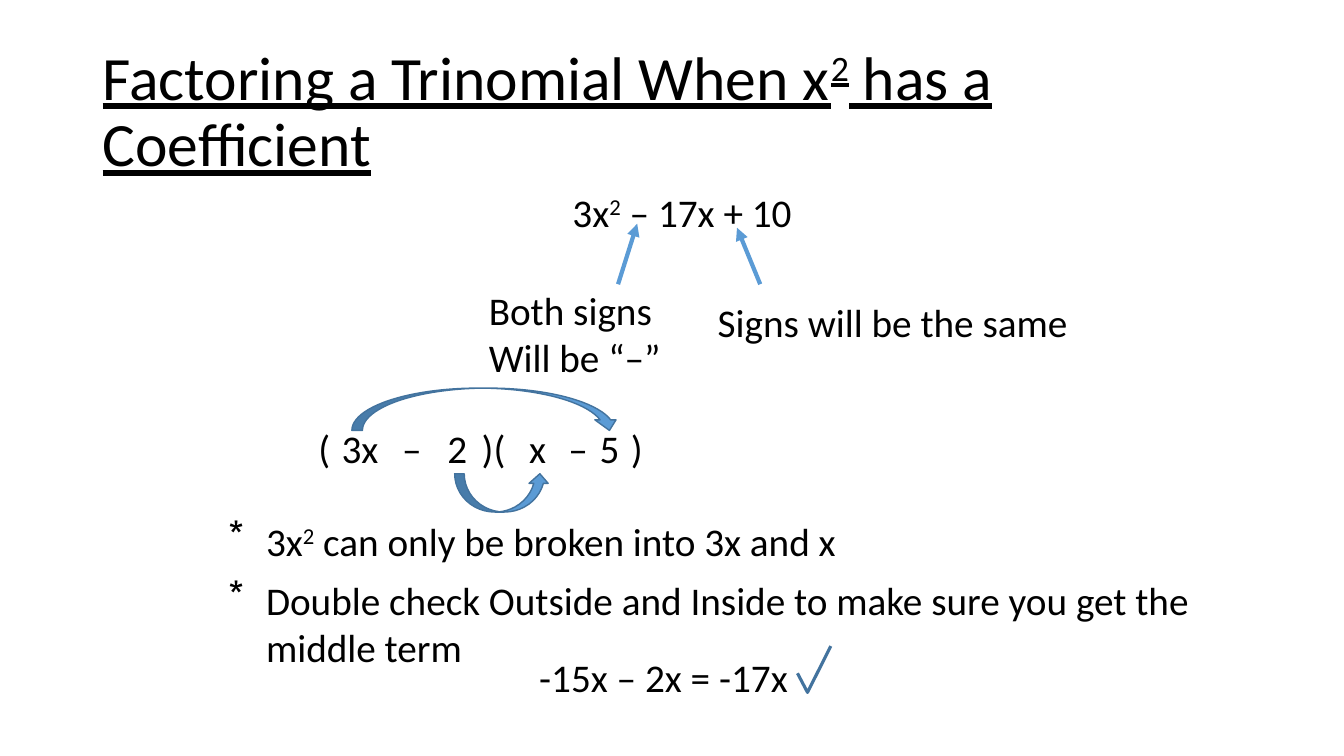
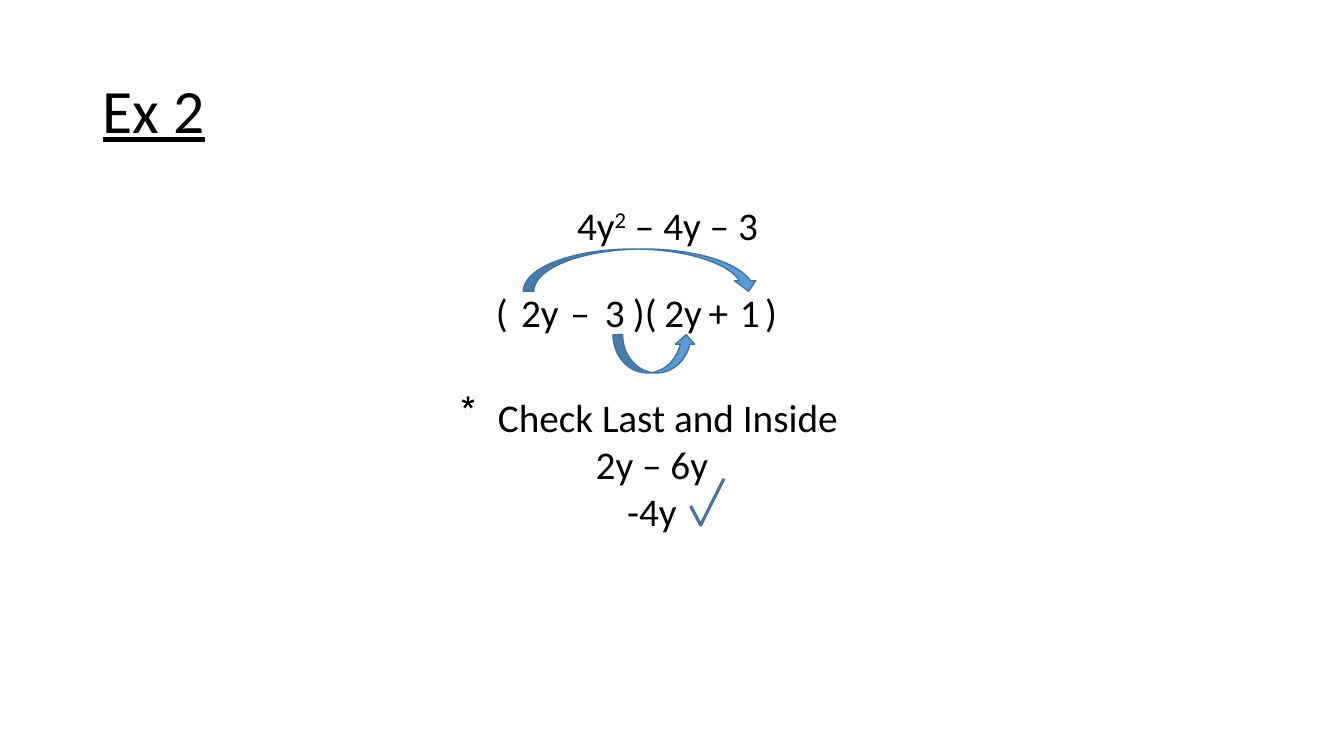
import pptx
import pptx.dml.color
import pptx.enum.shapes
import pptx.enum.text
import pptx.util
from lxml import etree
from pptx.oxml.ns import qn

Inches = pptx.util.Inches
Pt = pptx.util.Pt
Align = pptx.enum.text.PP_ALIGN
Preset = pptx.enum.shapes.MSO_SHAPE

BLACK = pptx.dml.color.RGBColor(0x00, 0x00, 0x00)
BLUE = pptx.dml.color.RGBColor(0x5B, 0x9B, 0xD5)
DARK_BLUE = pptx.dml.color.RGBColor(0x43, 0x73, 0x9E)
FONT = "Calibri"
HANGING = Inches(0.37)


def add_text(slide, lines, left, top, width, height, size=28, align=Align.LEFT):
    box = slide.shapes.add_textbox(Inches(left), Inches(top), Inches(width), Inches(height))
    frame = box.text_frame
    frame.word_wrap = True
    for index, line in enumerate(lines):
        paragraph = frame.paragraphs[0] if index == 0 else frame.add_paragraph()
        paragraph.alignment = align
        paragraph.font.name = FONT
        paragraph.font.size = Pt(size)
        paragraph.font.color.rgb = BLACK
        for position, part in enumerate(line.split("²")):
            if position:
                exponent = paragraph.add_run()
                exponent.text = "2"
                exponent.font._element.set("baseline", "30000")
            if part:
                paragraph.add_run().text = part
    return frame


def add_star(paragraph):
    paragraph.alignment = Align.LEFT
    properties = paragraph._p.get_or_add_pPr()
    properties.set("marL", str(HANGING))
    properties.set("indent", str(-HANGING))
    bullet = etree.Element(qn("a:buChar"), char="*")
    properties.insert(0, bullet)


presentation = pptx.Presentation()
presentation.slide_width = Inches(13.33)
presentation.slide_height = Inches(7.5)

examples = [
    {
        "title": "Factoring a Trinomial When x² has a Coefficient",
        "factors": ["(", "3x", "–", "2", ")(", "x", "–", "5", ")"],
        "stops": [3.16, 3.39, 3.99, 4.44, 4.78, 5.25, 5.64, 5.95, 6.26],
        "top": 4.16,
        "outside": (3.49, 3.85, 2.66),
        "inside": (4.51, 4.7, 0.94),
        "check": (7.91, 6.41),
    },
    {
        "title": "Ex 2",
        "factors": ["(", "2y", "–", "3", ")(", "2y", "+", "1", ")"],
        "stops": [4.92, 5.17, 5.66, 6, 6.28, 6.59, 7.03, 7.34, 7.59],
        "top": 2.81,
        "outside": (5.19, 2.47, 2.34),
        "inside": (6.08, 3.32, 0.82),
        "check": (6.85, 4.75),
    },
]

slides = []
for example in examples:
    slide = presentation.slides.add_slide(presentation.slide_layouts[6])
    slides.append(slide)

    title = add_text(slide, [example["title"]], 0.92, 0.4, 11.5, 1.45, size=44)
    title.vertical_anchor = pptx.enum.text.MSO_ANCHOR.MIDDLE
    title.paragraphs[0].line_spacing = 0.9
    title.paragraphs[0].font.underline = True

    start = example["stops"][0]
    factors = add_text(slide, ["\t".join(example["factors"])], start - 0.1, example["top"], 3.8, 0.57)
    properties = factors.paragraphs[0]._p.get_or_add_pPr()
    tabs = etree.Element(qn("a:tabLst"))
    for stop in example["stops"][1:]:
        etree.SubElement(tabs, qn("a:tab"), pos=str(Inches(stop - start)), algn="l")
    properties.insert(0, tabs)

    for preset, (left, top, width), height in (
        (Preset.CURVED_DOWN_ARROW, example["outside"], 0.42),
        (Preset.CURVED_UP_ARROW, example["inside"], 0.38),
    ):
        arrow = slide.shapes.add_shape(preset, Inches(left), Inches(top), Inches(width), Inches(height))
        arrow.shadow.inherit = False
        arrow.fill.solid()
        arrow.fill.fore_color.rgb = BLUE
        arrow.line.color.rgb = DARK_BLUE
        arrow.line.width = Pt(1)

    left, top = example["check"]
    outline = slide.shapes.build_freeform(Inches(left), Inches(top + 0.27))
    outline.add_line_segments(
        [(Inches(left + 0.1), Inches(top + 0.46)), (Inches(left + 0.33), Inches(top))], close=False
    )
    check = outline.convert_to_shape()
    check.shadow.inherit = False
    check.fill.background()
    check.line.color.rgb = DARK_BLUE
    check.line.width = Pt(2.25)

coefficient, second = slides

add_text(coefficient, ["3x² – 17x + 10"], 5.58, 1.82, 2.7, 0.57)
add_text(coefficient, ["Both signs", "Will be “–”"], 4.75, 2.79, 2.1, 1.04)
add_text(coefficient, ["Signs will be the same"], 7.02, 2.91, 3.8, 0.57)
add_text(coefficient, ["-15x – 2x = -17x"], 5.25, 6.43, 2.8, 0.57)

for line, top, height in (
    ("3x² can only be broken into 3x and x", 5.08, 0.57),
    ("Double check Outside and Inside to make sure you get the middle term", 5.67, 1.04),
):
    note = add_text(coefficient, [line], 2.17, top, 9.92, height)
    add_star(note.paragraphs[0])

for start_x, end_x, end_y in ((7.54, 7.31, 2.26), (6.13, 6.32, 2.22)):
    pointer = coefficient.shapes.add_connector(
        pptx.enum.shapes.MSO_CONNECTOR.STRAIGHT,
        Inches(start_x), Inches(2.82), Inches(end_x), Inches(end_y),
    )
    pointer.line.color.rgb = BLUE
    pointer.line.width = Pt(3)
    etree.SubElement(pointer.line._get_or_add_ln(), qn("a:tailEnd"), type="triangle")
    etree.SubElement(pointer._element.spPr, qn("a:effectLst"))

trinomial = add_text(second, ["4y² – 4y – 3"], 0.92, 2, 11.4, 0.62, align=Align.CENTER)
trinomial.paragraphs[0].line_spacing = 0.9
trinomial.paragraphs[0].space_before = Pt(10)

steps = add_text(
    second, ["Check Last and Inside", "2y – 6y", "-4y"], 4.47, 3.85, 3.99, 1.51, align=Align.CENTER
)
add_star(steps.paragraphs[0])

presentation.save("out.pptx")
